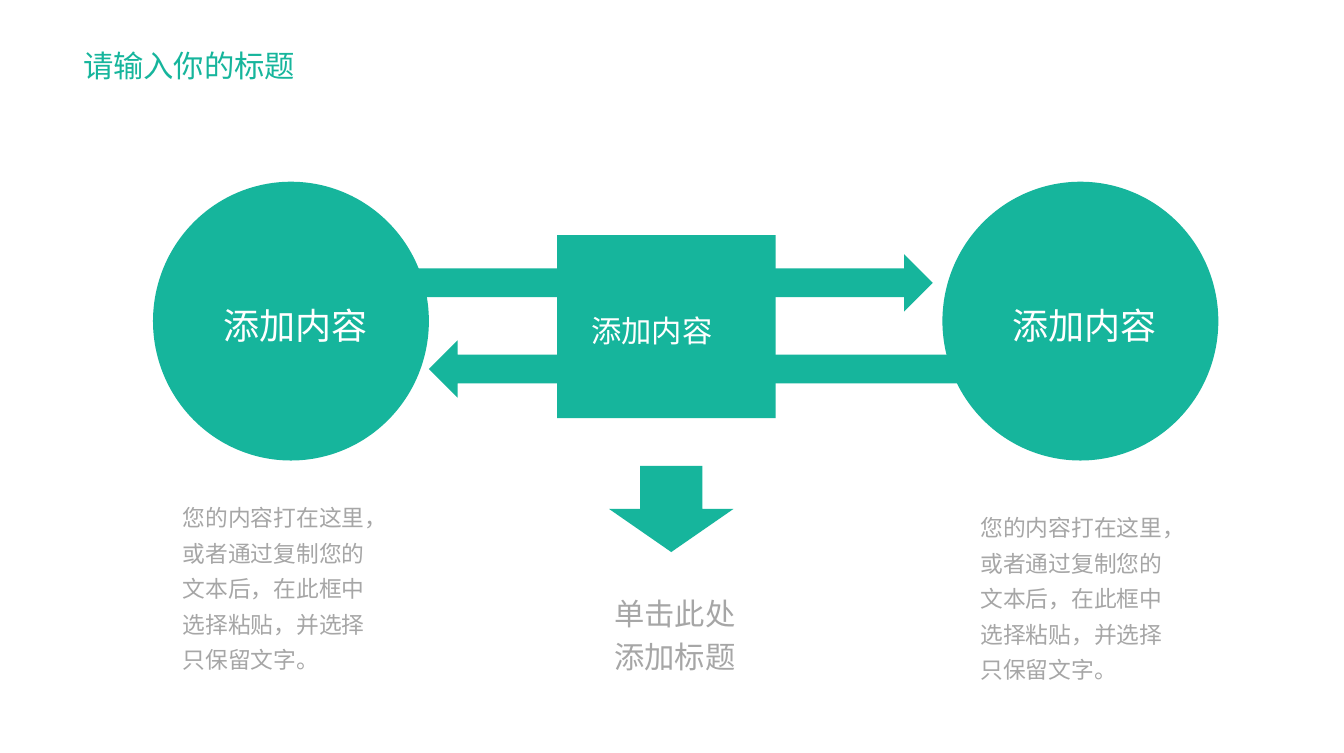
from dataclasses import dataclass

from lxml import etree
from pptx import Presentation
from pptx.dml.color import RGBColor
from pptx.enum.shapes import MSO_SHAPE
from pptx.enum.text import MSO_ANCHOR, PP_ALIGN
from pptx.oxml.ns import qn
from pptx.util import Inches, Pt

CIRCLE, BOX = MSO_SHAPE.OVAL, MSO_SHAPE.RECTANGLE
RIGHT, LEFT, DOWN = MSO_SHAPE.RIGHT_ARROW, MSO_SHAPE.LEFT_ARROW, MSO_SHAPE.DOWN_ARROW
TOP, MIDDLE = MSO_ANCHOR.TOP, MSO_ANCHOR.MIDDLE
ALIGN_LEFT = PP_ALIGN.LEFT


@dataclass(frozen=True)
class Theme:
    font: str = "Noto Sans CJK SC"
    teal: RGBColor = RGBColor(0x16, 0xB5, 0x9C)
    grey: RGBColor = RGBColor(0xA6, 0xA6, 0xA6)
    white: RGBColor = RGBColor(0xFF, 0xFF, 0xFF)
    heading: int = 16
    circle_label: int = 19
    body: int = 12


theme = Theme()

deck = Presentation()
deck.slide_width, deck.slide_height = Inches(9.84), Inches(5.51)
slide = deck.slides.add_slide(deck.slide_layouts[6])


def add_teal_shape(kind, left, top, width, height):
    shape = slide.shapes.add_shape(
        kind, Inches(left), Inches(top), Inches(width), Inches(height))
    shape.shadow.inherit = False
    shape.fill.solid()
    shape.fill.fore_color.rgb = theme.teal
    shape.line.fill.background()
    return shape


def write(holder, text, size, color, spacing, anchor=TOP, inset=0.1):
    """Fill a shape or text box with one left-aligned run."""
    frame = holder.text_frame
    frame.word_wrap = True
    frame.vertical_anchor = anchor
    frame.margin_left = Inches(inset)
    paragraph = frame.paragraphs[0]
    paragraph.alignment = ALIGN_LEFT
    paragraph.line_spacing = spacing
    run = paragraph.add_run()
    run.text = text
    run.font.size = Pt(size)
    run.font.color.rgb = color
    run.font.name = theme.font
    east_asian = etree.SubElement(run._r.get_or_add_rPr(), qn("a:ea"))
    east_asian.set("typeface", theme.font)


# Exchange arrows run behind the circles and the central box
add_teal_shape(RIGHT, 3, 1.86, 3.83, 0.42)
add_teal_shape(LEFT, 3.14, 2.49, 3.97, 0.42)

for circle_left in (1.12, 6.9):
    circle = add_teal_shape(CIRCLE, circle_left, 1.33, 2.02, 2.04)
    write(circle, "添加内容", theme.circle_label, theme.white, 1.2, MIDDLE, 0.22)

center_box = add_teal_shape(BOX, 4.08, 1.72, 1.6, 1.34)
write(center_box, "添加内容", theme.heading, theme.white, 1.2, MIDDLE, 0.25)
add_teal_shape(DOWN, 4.46, 3.41, 0.91, 0.63)

description = "您的内容打在这里，或者通过复制您的文本后，在此框中选择粘贴，并选择只保留文字。"
captions = [
    # left, top, width, height, text, size, color, line spacing
    (0.51, 0.16, 2.12, 0.5, "请输入你的标题", theme.heading, theme.teal, 1.5),
    (1.24, 3.58, 1.67, 1.42, description, theme.body, theme.grey, 1.3),
    (7.08, 3.65, 1.67, 1.42, description, theme.body, theme.grey, 1.3),
    (4.4, 4.25, 1.27, 0.75, "单击此处添加标题", theme.heading, theme.grey, 1.2),
]
for left, top, width, height, text, size, color, spacing in captions:
    caption = slide.shapes.add_textbox(
        Inches(left), Inches(top), Inches(width), Inches(height))
    write(caption, text, size, color, spacing)

deck.save("out.pptx")
